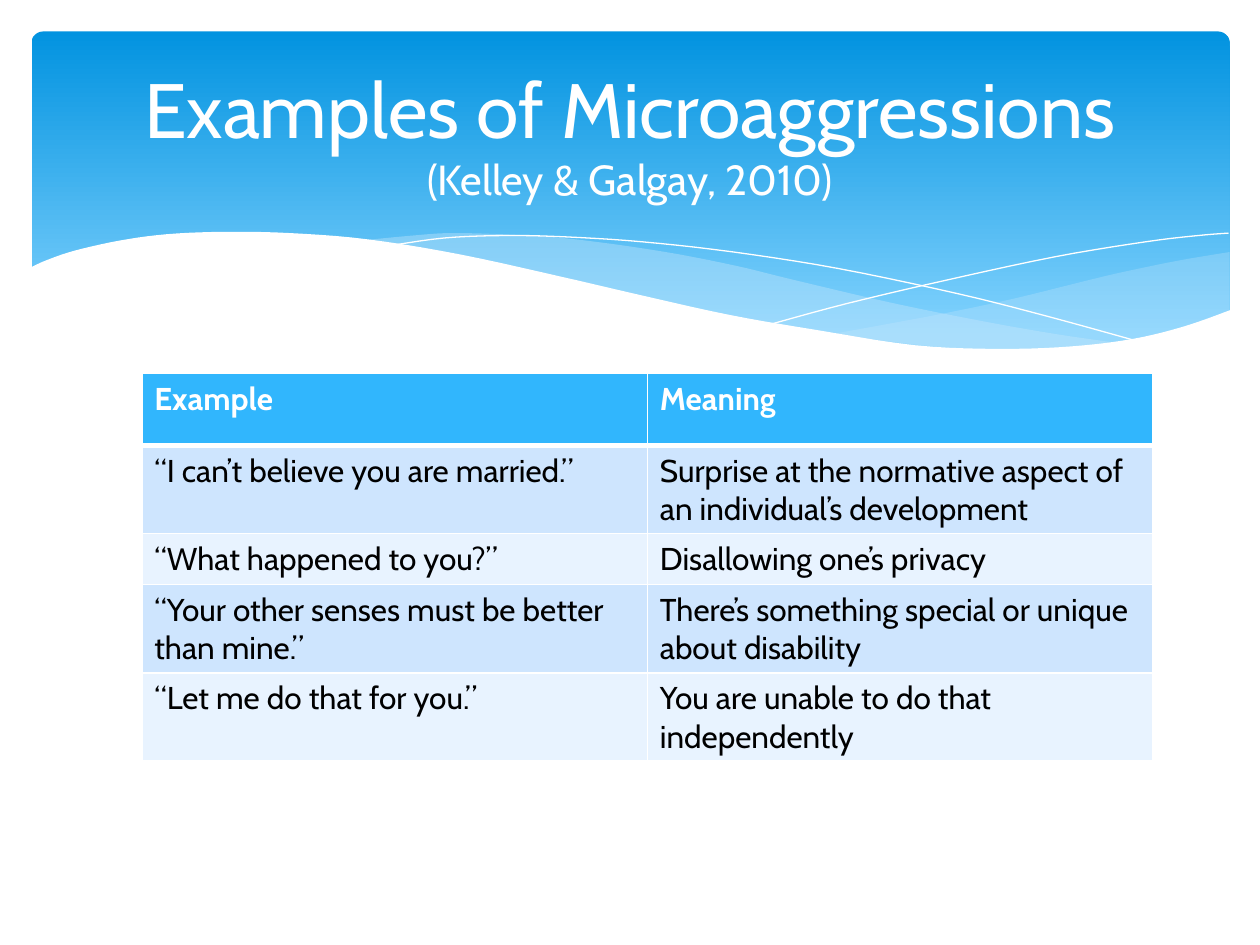
import dataclasses

import pptx
import pptx.dml.color
import pptx.enum.shapes
import pptx.enum.text
import pptx.oxml
import pptx.oxml.ns
import pptx.util
from lxml import etree

Pt = pptx.util.Pt


@dataclasses.dataclass(frozen=True)
class Theme:
    font: str = "Cabin"
    white: str = "FFFFFF"
    ink: str = "000000"
    banner_top: str = "0293E0"
    banner_bottom: str = "83D3FE"
    wave: str = "C6E7FC"
    header: str = "31B6FD"
    bands: tuple = ("CEE5FE", "E8F3FF")
    title_size: float = 44
    citation_size: float = 24
    table_size: float = 18


def rgb(color):
    return pptx.dml.color.RGBColor.from_string(color)


def smooth(knots, steps=5):
    """Points on a Catmull-Rom curve through the knots."""
    padded = [knots[0], *knots, knots[-1]]
    curve = [knots[0]]
    for a, b, c, d in zip(padded, padded[1:], padded[2:], padded[3:]):
        for step in range(1, steps + 1):
            t = step / steps
            curve.append(tuple(
                0.5 * (2 * q + (r - p) * t + (2 * p - 5 * q + 4 * r - s) * t ** 2
                       + (3 * q - p - 3 * r + s) * t ** 3)
                for p, q, r, s in zip(a, b, c, d)))
    return curve


class SlideBuilder:
    def __init__(self, slide, theme):
        self.slide = slide
        self.shapes = slide.shapes
        self.theme = theme

    def run(self, paragraph, text, size, color, bold=False):
        run = paragraph.add_run()
        run.text = text
        run.font.name = self.theme.font
        run.font.size = Pt(size)
        run.font.bold = bold
        run.font.color.rgb = rgb(color)

    def banner(self, left, top, width, height, rounding):
        banner = self.shapes.add_shape(
            pptx.enum.shapes.MSO_SHAPE.ROUNDED_RECTANGLE,
            Pt(left), Pt(top), Pt(width), Pt(height))
        banner.adjustments[0] = rounding
        banner.shadow.inherit = False
        banner.line.fill.background()
        banner.fill.gradient()
        banner.fill.gradient_angle = 270
        colors = (self.theme.banner_top, self.theme.banner_bottom)
        for stop, color, position in zip(banner.fill.gradient_stops, colors, (0, 0.9)):
            stop.color.rgb = rgb(color)
            stop.position = position

    def outline(self, points, closed):
        start, *rest = [(Pt(x), Pt(y)) for x, y in points]
        builder = self.shapes.build_freeform(*start)
        builder.add_line_segments(rest, close=closed)
        shape = builder.convert_to_shape()
        shape.shadow.inherit = False
        return shape

    def area(self, points, color, opacity=100):
        area = self.outline(points, closed=True)
        area.line.fill.background()
        area.fill.solid()
        area.fill.fore_color.rgb = rgb(color)
        if opacity < 100:
            tint = area.fill._xPr.find(".//" + pptx.oxml.ns.qn("a:srgbClr"))
            etree.SubElement(tint, pptx.oxml.ns.qn("a:alpha"), val=str(opacity * 1000))

    def hairline(self, points):
        hairline = self.outline(points, closed=False)
        hairline.fill.background()
        hairline.line.color.rgb = rgb(self.theme.white)
        hairline.line.width = Pt(0)

    def title(self, left, top, width, height, heading, citation):
        frame = self.shapes.add_textbox(Pt(left), Pt(top), Pt(width), Pt(height)).text_frame
        frame.word_wrap = True
        frame.vertical_anchor = pptx.enum.text.MSO_ANCHOR.MIDDLE
        paragraph = frame.paragraphs[0]
        paragraph.alignment = pptx.enum.text.PP_ALIGN.CENTER
        self.run(paragraph, heading, self.theme.title_size, self.theme.white)
        paragraph.add_line_break()
        self.run(paragraph, citation, self.theme.citation_size, self.theme.white)

    def borders(self, cell, widths):
        properties = cell._tc.get_or_add_tcPr()
        for side, width in widths.items():
            properties.append(pptx.oxml.parse_xml(
                f'<a:ln{side} {pptx.oxml.ns.nsdecls("a")} w="{Pt(width)}"><a:solidFill>'
                f'<a:srgbClr val="{self.theme.white}"/></a:solidFill></a:ln{side}>'))

    def table(self, left, top, column_width, row_heights, rows):
        columns = len(rows[0])
        table = self.shapes.add_table(
            len(rows), columns, Pt(left), Pt(top),
            Pt(column_width * columns), Pt(sum(row_heights))).table
        table.horz_banding = False
        for column in table.columns:
            column.width = Pt(column_width)
        for index, (height, texts) in enumerate(zip(row_heights, rows)):
            table.rows[index].height = Pt(height)
            is_header = index == 0
            fill = self.theme.header if is_header else self.theme.bands[(index - 1) % 2]
            color = self.theme.white if is_header else self.theme.ink
            # The heavy rule lies between the header and the first example
            widths = {"L": 1, "R": 1, "T": 3 if index == 1 else 1, "B": 3 if is_header else 1}
            for column, text in enumerate(texts):
                cell = table.cell(index, column)
                self.borders(cell, widths)
                cell.fill.solid()
                cell.fill.fore_color.rgb = rgb(fill)
                self.run(cell.text_frame.paragraphs[0], text,
                         self.theme.table_size, color, is_header)


# Wave curves
RIGHT_WAVE_TOP = [(702.7, 144), (673, 149), (641.5, 155.5), (620, 160.6), (579.6, 170.6),
                  (542, 178.6), (508, 185), (476, 190.8)]
RIGHT_WAVE_BOTTOM = [(476, 190.8), (497.5, 193.7), (527, 197.3), (553.7, 199.4),
                     (586, 200.2), (615, 198.7), (645.8, 194.4), (673, 188.6),
                     (693.4, 181.4), (702.7, 177.8)]
MIDDLE_WAVE_TOP = [(643, 196.6), (602.6, 190.8), (558, 182.9), (508.3, 172.8),
                   (452.9, 159.8), (420.5, 151.9), (380.2, 144), (334.8, 137.5),
                   (302.4, 134.6), (260, 133.2), (236.2, 134.6), (206, 137.5)]
MIDDLE_WAVE_BOTTOM = [(206, 137.5), (246.2, 143.3), (291, 152), (323.3, 159.8),
                      (381.6, 172.8), (432.7, 183.6), (478.8, 191.5), (519.8, 197.3),
                      (556.6, 199.4), (589, 200.2), (617, 199.4), (643, 196.6)]
FALLING_LINE = [(222.5, 140.4), (254, 136), (288.7, 134.6), (324, 135.4), (367.2, 138.2),
                (419, 144), (478.8, 153.4), (547.2, 167.8), (598.3, 180.7), (653, 195.8)]
RISING_LINE = [(441.4, 185), (483.8, 173.5), (538.6, 160.6), (602, 146.9),
               (654.5, 138.2), (684.7, 134.6), (702, 133.2)]
PAGE_EDGE = [(703.4, 177.1), (676.8, 186.5), (647.3, 193.7), (612, 198), (571, 199.4),
             (522.7, 197.3), (466.6, 188.6), (416.9, 180), (362.2, 167.8), (321.8, 158.4),
             (262.8, 145.4), (210.2, 136.8), (165.6, 133.2), (127.4, 132.5), (95, 133.9),
             (68.4, 137.5), (42.5, 143.3), (25.9, 149), (16.6, 153.4)]
PAGE_CORNERS = [(16.6, 236.9), (703.4, 236.9)]

EXAMPLES = [
    ("Example", "Meaning"),
    ("“I can’t believe you are married.”",
     "Surprise at the normative aspect of an individual’s development"),
    ("“What happened to you?”", "Disallowing one’s privacy"),
    ("“Your other senses must be better than mine.”",
     "There’s something special or unique about disability"),
    ("“Let me do that for you.”", "You are unable to do that independently"),
]


def main():
    presentation = pptx.Presentation()
    presentation.slide_width, presentation.slide_height = Pt(720), Pt(540)
    theme = Theme()
    builder = SlideBuilder(
        presentation.slides.add_slide(presentation.slide_layouts[6]), theme)

    # Banner with waves
    builder.banner(18, 18, 684.7, 194.4, 0.034)
    builder.area(smooth(RIGHT_WAVE_TOP) + smooth(RIGHT_WAVE_BOTTOM), theme.wave, 29)
    builder.area(smooth(MIDDLE_WAVE_TOP) + smooth(MIDDLE_WAVE_BOTTOM), theme.wave, 40)
    builder.hairline(smooth(FALLING_LINE))
    builder.hairline(smooth(RISING_LINE))
    builder.area(smooth(PAGE_EDGE) + PAGE_CORNERS, theme.white)

    # Title
    builder.title(36, 26.6, 648, 98.6, "Examples of Microaggressions", "(Kelley & Galgay, 2010)")

    # Table of examples
    builder.table(81, 213.5, 288.9, [41] + [29.2] * 4, EXAMPLES)

    presentation.save("out.pptx")


if __name__ == "__main__":
    main()
